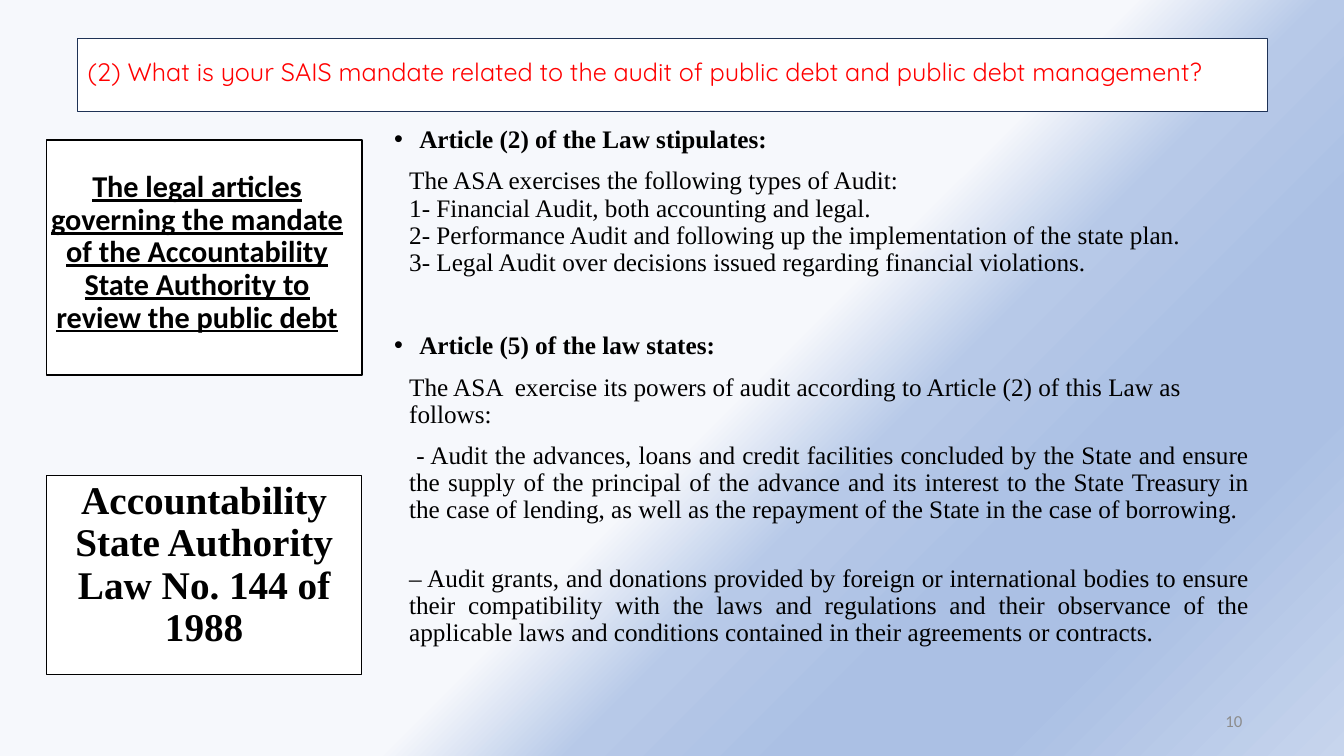
from lxml import etree
from pptx import Presentation
from pptx import util as u
from pptx.dml.color import RGBColor
from pptx.enum import shapes, text
from pptx.oxml.ns import qn

QUESTION = "(2) What is your SAIS mandate related to the audit of public debt and public debt management?"
HEADING = ("The legal articles governing the mandate of the Accountability State Authority "
           "to review the public debt")
LAW = "Accountability State Authority Law No. 144 of 1988"
PAGE = "10"
ARTICLES = [
    ("article", 10, "Article (2) of the Law stipulates:"),
    ("clause", 10, "The ASA exercises the following types of Audit:\n"
     "1- Financial Audit, both accounting and legal.\n"
     "2- Performance Audit and following up the implementation of the state plan.\n"
     "3- Legal Audit over decisions issued regarding financial violations."),
    ("article", 40, "Article (5) of the law states:"),
    ("clause", 10, "The ASA  exercise its powers of audit according to Article (2) of this Law as follows:"),
    ("duty", 10, " - Audit the advances, loans and credit facilities concluded by the State and ensure "
     "the supply of the principal of the advance and its interest to the State Treasury in the case "
     "of lending, as well as the repayment of the State in the case of borrowing."),
    ("duty", 29.5, "– Audit grants, and donations provided by foreign or international bodies to ensure "
     "their compatibility with the laws and regulations and their observance of the applicable laws "
     "and conditions contained in their agreements or contracts."),
]

COLORS = {"ink": "000000", "paper": "FFFFFF", "navy": "1E3256", "red": "FF0000", "grey": "8C8C8C"}
BACKDROP = [(54, "F6F8FC"), (63, "B7C9E8"), (74, "ABC0E4"), (83, "ABC0E4"), (100, "C7D5ED")]
SERIF = "Times New Roman"
ALIGN, ANCHOR = text.PP_ALIGN, text.MSO_ANCHOR

WIDTH, HEIGHT = 13.33, 7.5
SIDE_LEFT, SIDE_WIDTH = 0.46, 3.13
BANNER_LEFT = 0.77
AREAS = {
    "heading frame": (SIDE_LEFT, 1.39, SIDE_WIDTH, 2.33),
    "banner": (BANNER_LEFT, 0.38, 11.8, 0.73),
    "heading": (0.39, 1.4, SIDE_WIDTH, 1.97),
    "articles": (3.81, 1.21, 8.68, HEIGHT - 1.21),
    "law": (SIDE_LEFT, 4.72, SIDE_WIDTH, 1.97),
    "question": (BANNER_LEFT, 0.51, 11.95, 0.4),
    "page": (9.42, 6.95, 3, 0.4),
}
INDENTS = {"article": (0.25, -0.25), "clause": (0.15, 0), "duty": (0.15, 0)}


def inches(area):
    return [u.Inches(value) for value in AREAS[area]]


def apply(target, formats):
    for name, value in formats.items():
        setattr(target, name, value)


def write(paragraph, words, color, font, layout):
    paragraph.text = words
    apply(paragraph, layout)
    for run in paragraph.runs:
        apply(run.font, font)
        run.font.color.rgb = RGBColor.from_string(COLORS[color])


def add_frame(slide, area, line, weight):
    frame = slide.shapes.add_shape(shapes.MSO_SHAPE.RECTANGLE, *inches(area))
    frame.shadow.inherit = False
    frame.fill.solid()
    frame.fill.fore_color.rgb = RGBColor.from_string(COLORS["paper"])
    frame.line.color.rgb = RGBColor.from_string(COLORS[line])
    frame.line.width = u.Pt(weight)
    return frame


def prepare(holder, anchor=ANCHOR.TOP):
    apply(holder.text_frame, {"word_wrap": True, "auto_size": text.MSO_AUTO_SIZE.NONE,
                              "vertical_anchor": anchor})
    return holder.text_frame


def add_text(slide, area, anchor=ANCHOR.TOP):
    return prepare(slide.shapes.add_textbox(*inches(area)), anchor)


def paint_backdrop(slide):
    fill = slide.background.fill
    fill.gradient()
    fill.gradient_angle = 315
    stops = next(slide.background._cSld.iter(qn("a:gsLst")))
    for stop in list(stops):
        stops.remove(stop)
    for share, color in BACKDROP:
        stop = etree.SubElement(stops, qn("a:gs"), pos=str(share * 1000))
        etree.SubElement(stop, qn("a:srgbClr"), val=color)


def list_articles(frame):
    for index, (kind, gap, words) in enumerate(ARTICLES):
        paragraph = frame.add_paragraph() if index else frame.paragraphs[0]
        write(paragraph, words, "ink",
              {"name": SERIF, "size": u.Pt(18), "bold": kind == "article"},
              {"line_spacing": 0.9, "space_before": u.Pt(gap),
               "alignment": ALIGN.JUSTIFY if kind == "duty" else ALIGN.LEFT})
        props = paragraph._p.get_or_add_pPr()
        for name, value in zip(("marL", "indent"), INDENTS[kind]):
            props.set(name, str(u.Inches(value)))
        if kind == "article":
            etree.SubElement(props, qn("a:buFont"), typeface="Arial")
            etree.SubElement(props, qn("a:buChar"), char="•")


def main():
    deck = Presentation()
    apply(deck, {"slide_width": u.Inches(WIDTH), "slide_height": u.Inches(HEIGHT)})
    slide = deck.slides.add_slide(deck.slide_layouts[5])
    paint_backdrop(slide)

    add_frame(slide, "heading frame", "ink", 1)
    add_frame(slide, "banner", "navy", 1)

    heading = slide.shapes.title
    apply(heading, dict(zip(("left", "top", "width", "height"), inches("heading"))))
    slide.shapes._spTree.append(heading._element)
    write(prepare(heading, ANCHOR.BOTTOM).paragraphs[0], HEADING, "ink",
          {"name": "Calibri", "size": u.Pt(21.6), "bold": True, "underline": True},
          {"alignment": ALIGN.CENTER, "line_spacing": 0.9})

    list_articles(add_text(slide, "articles"))

    law = prepare(add_frame(slide, "law", "ink", 0.75))
    write(law.paragraphs[0], LAW, "ink", {"name": SERIF, "size": u.Pt(28), "bold": True},
          {"alignment": ALIGN.CENTER, "line_spacing": 0.9, "space_before": u.Pt(10)})

    write(add_text(slide, "question").paragraphs[0], QUESTION, "red",
          {"name": "Quicksand", "size": u.Pt(18)}, {"alignment": ALIGN.LEFT})
    write(add_text(slide, "page", ANCHOR.MIDDLE).paragraphs[0], PAGE, "grey",
          {"name": "Calibri", "size": u.Pt(12)}, {"alignment": ALIGN.RIGHT})

    deck.save("out.pptx")


if __name__ == "__main__":
    main()
